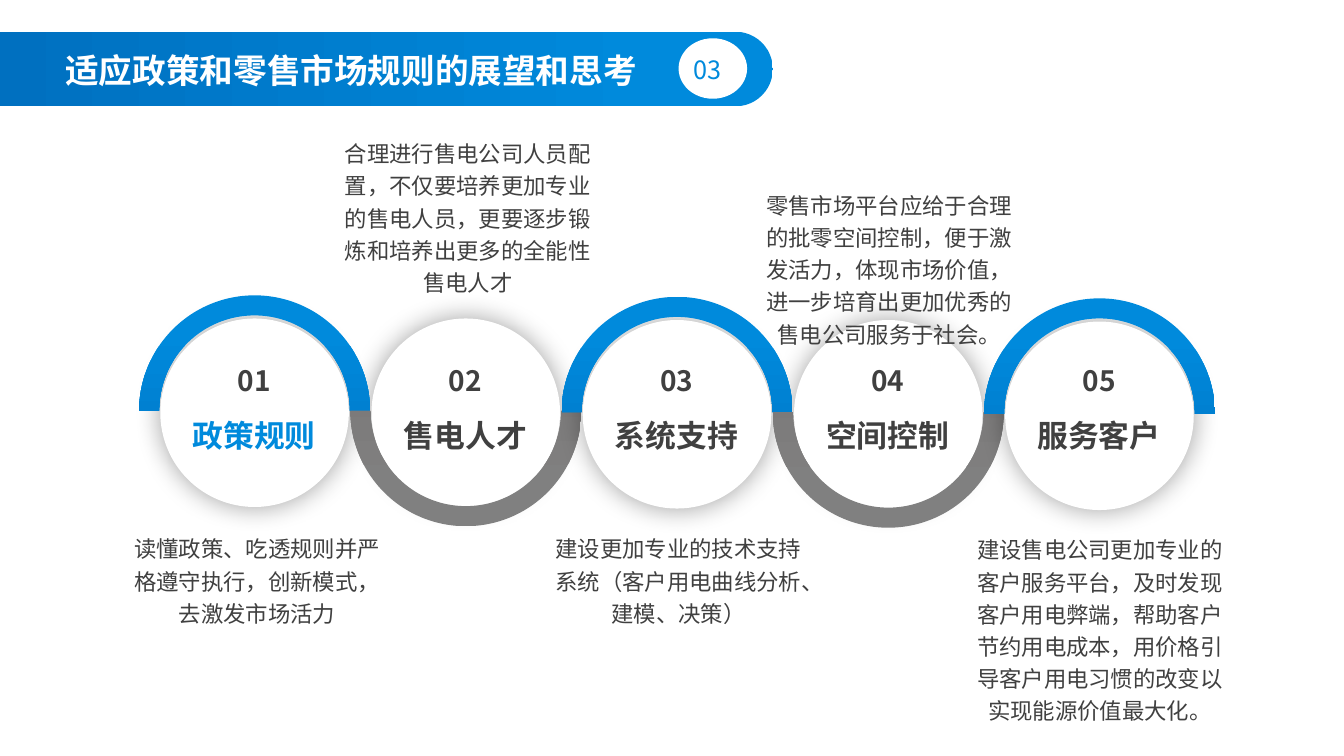
from lxml import etree
from pptx import Presentation
from pptx.dml.color import RGBColor
from pptx.enum.shapes import MSO_SHAPE
from pptx.enum.text import MSO_AUTO_SIZE, PP_ALIGN
from pptx.oxml.ns import qn
from pptx.util import Inches, Pt

ELLIPSE = MSO_SHAPE.OVAL
ARC = MSO_SHAPE.BLOCK_ARC
BANNER = MSO_SHAPE.ROUND_2_SAME_RECTANGLE
LEFT, CENTER = PP_ALIGN.LEFT, PP_ALIGN.CENTER
GROW = MSO_AUTO_SIZE.SHAPE_TO_FIT_TEXT

FONT = "Noto Sans CJK SC"
COLORS = {
    "white": "FFFFFF", "black": "000000",
    "blue": "008ADC", "deep_blue": "0070C0",
    "gray": "808080", "warm_gray": "767171",
    "ink": "404040", "deep_ink": "3B3838",
}
# Vertical gradients: top colour, bottom colour, position of the top stop
BLUE = ("blue", "deep_blue", 0.16)
GRAY = ("gray", "warm_gray", 0.16)
BLUE_TEXT = ("blue", "deep_blue", 0)
INK = ("ink", "deep_ink", 0.16)
INK_TEXT = ("ink", "deep_ink", 0)
INK_GRAY = ("ink", "warm_gray", 0.16)

STEP = 2.095  # distance between neighbouring circles
STEPS = [  # label, label colour, description, its top and height
    ("政策规则", BLUE_TEXT, "读懂政策、吃透规则并严格遵守执行，创新模式，去激发市场活力", 5.21, 1.07),
    ("售电人才", INK_GRAY, "合理进行售电公司人员配置，不仅要培养更加专业的售电人员，"
     "更要逐步锻炼和培养出更多的全能性售电人才", 1.29, 1.69),
    ("系统支持", INK_TEXT, "建设更加专业的技术支持系统（客户用电曲线分析、建模、决策）", 5.21, 1.07),
    ("空间控制", INK_GRAY, "零售市场平台应给于合理的批零空间控制，便于激发活力，体现市场价值，"
     "进一步培育出更加优秀的售电公司服务于社会。", 1.8, 1.71),
    ("服务客户", INK_TEXT, "建设售电公司更加专业的客户服务平台，及时发现客户用电弊端，"
     "帮助客户节约用电成本，用价格引导客户用电习惯的改变以实现能源价值最大化。", 5.22, 2.04),
]


class Deck:
    def __init__(self):
        self.prs = Presentation()
        self.prs.slide_width, self.prs.slide_height = Inches(13.33), Inches(7.5)
        self.s = self.prs.slides.add_slide(self.prs.slide_layouts[6])

    def paint(self, fill, color):
        """Fill with one named colour, or with a gradient given as a tuple."""
        if isinstance(color, str):
            fill.solid()
            fill.fore_color.rgb = RGBColor.from_string(COLORS[color])
            return
        fill.gradient()
        fill.gradient_angle = 270
        for stop, name, pos in zip(fill.gradient_stops, color, (color[2], 1)):
            stop.color.rgb = RGBColor.from_string(COLORS[name])
            stop.position = pos

    def shape(self, kind, x, y, w, h, color, adj=(), rot=0):
        sp = self.s.shapes.add_shape(kind, Inches(x), Inches(y), Inches(w), Inches(h))
        for i, value in enumerate(adj):
            sp.adjustments[i] = value
        sp.rotation = rot
        sp.shadow.inherit = False
        sp.line.fill.background()
        self.paint(sp.fill, color)
        return sp

    def glow(self, sp):
        """Give a shape a soft shadow on all sides."""
        effects = sp._element.spPr.find(qn("a:effectLst"))
        shadow = etree.SubElement(effects, qn("a:outerShdw"), blurRad=str(Pt(19)),
                                  dist="0", dir="0", algn="ctr", rotWithShape="0")
        clr = etree.SubElement(shadow, qn("a:srgbClr"), val=COLORS["black"])
        etree.SubElement(clr, qn("a:alpha"), val="37000")

    def text(self, x, y, w, h, text, size, color, bold=False, align=CENTER, spacing=None):
        tf = self.s.shapes.add_textbox(Inches(x), Inches(y), Inches(w), Inches(h)).text_frame
        tf.word_wrap = True
        tf.auto_size = GROW
        p = tf.paragraphs[0]
        p.alignment = align
        p.line_spacing = spacing
        r = p.add_run()
        r.text = text
        r.font.size, r.font.bold, r.font.name = Pt(size), bold, FONT
        self.paint(r.font.fill, color)
        etree.SubElement(r.font._element, qn("a:ea"), typeface=FONT)


def main():
    deck = Deck()

    # Title banner, turned so that the round end points right
    deck.shape(BANNER, 3.46, -3.15, 0.74, 7.67, BLUE, (0.5, 0), 90)
    deck.text(0.55, 0.45, 5.92, 0.91, "适应政策和零售市场规则的展望和思考", 24, "white", True, LEFT)
    deck.shape(ELLIPSE, 6.73, 0.38, 0.68, 0.6, "white")
    deck.text(6.73, 0.49, 0.64, 0.4, "03 ", 18, BLUE_TEXT)

    # Chain of circles and half rings, each pair slightly lower than the last
    for pair, members in enumerate(((0, 1), (2, 3), (4,))):
        drop = 0.015 * pair
        for i in reversed(members):
            deck.glow(deck.shape(ELLIPSE, 1.59 + STEP * i, 3.16 + drop, 1.87, 1.87, "white"))
        for i in members:
            color, rot = (GRAY, 180) if i % 2 else (BLUE, 0)
            deck.shape(ARC, 1.38 + STEP * i, 2.93 + drop, 2.29, 2.29, color,
                       (108, 0, 0.087), rot)

    # Numbers, labels and descriptions
    for i, (label, color, description, top, height) in enumerate(STEPS):
        x = STEP * i
        deck.text(1.79 + x, 4.05, 1.46, 0.51, label, 22, color, True, spacing=1.1)
        deck.text(2.01 + x, 3.56, 1.02, 0.44, f"{i + 1:02}", 20, INK_TEXT, True)
        deck.text(1.2 + 2.09 * i, top, 2.7, height, description, 16, INK, spacing=1.2)

    deck.prs.save("out.pptx")


if __name__ == "__main__":
    main()
